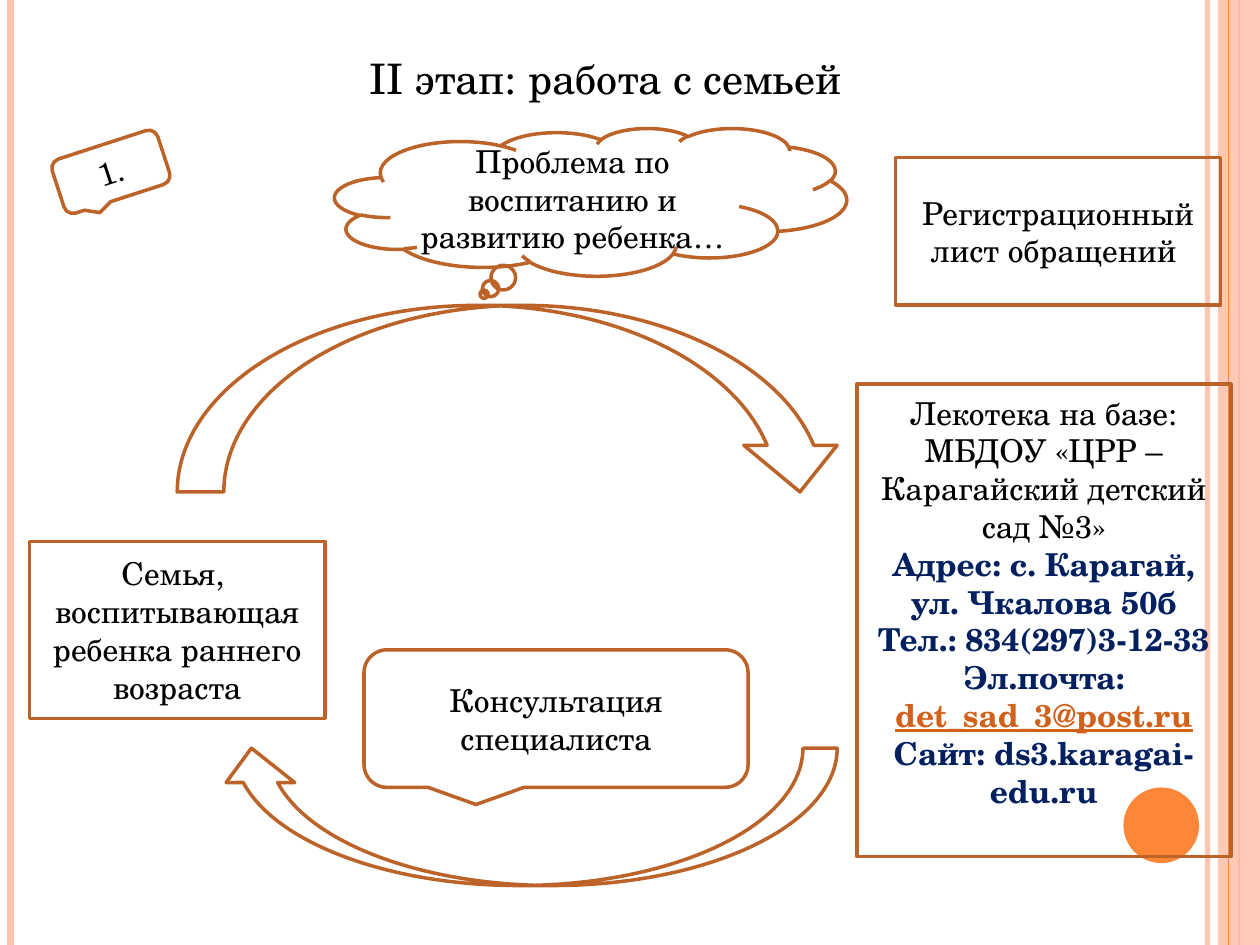
from lxml.etree import SubElement
from pptx import Presentation
from pptx.dml.color import RGBColor
from pptx.enum.shapes import MSO_CONNECTOR, MSO_SHAPE
from pptx.enum.text import MSO_ANCHOR, PP_ALIGN
from pptx.oxml.ns import qn
from pptx.util import Pt

FONT = "TeX Gyre Schola"
BLACK = RGBColor(0x00, 0x00, 0x00)
NAVY = RGBColor(0x00, 0x20, 0x60)
LINK = RGBColor(0xD2, 0x61, 0x1C)
BROWN = RGBColor(0xBC, 0x63, 0x29)
PINK = RGBColor(0xFE, 0xC3, 0xAE)
ORANGE = RGBColor(0xFE, 0x86, 0x37)

WIDTH, HEIGHT = 720, 540


def set_alpha(fill, percent):
    """Make a solid fill (or a line's fill) partly transparent."""
    color = fill._xPr.find(qn("a:solidFill"))[0]
    SubElement(color, qn("a:alpha"), val=str(percent * 1000))


def add_stripe(s, x, color, width, alpha=None):
    """Draw a vertical line over the full height of the slide."""
    line = s.shapes.add_connector(MSO_CONNECTOR.STRAIGHT, Pt(x), 0, Pt(x), Pt(HEIGHT))
    line.line.color.rgb = color
    line.line.width = Pt(width)
    if alpha:
        set_alpha(line.line.fill, alpha)
    SubElement(line._element.spPr, qn("a:effectLst"))


def add_solid(s, kind, box, color, alpha=None):
    sp = s.shapes.add_shape(kind, *map(Pt, box))
    sp.shadow.inherit = False
    sp.fill.solid()
    sp.fill.fore_color.rgb = color
    if alpha:
        set_alpha(sp.fill, alpha)
    sp.line.fill.background()


def add_outline(s, kind, box, rotation=0):
    sp = s.shapes.add_shape(kind, *map(Pt, box))
    sp.shadow.inherit = False
    sp.fill.background()
    sp.line.color.rgb = BROWN
    sp.line.width = Pt(2)
    sp.rotation = rotation
    return sp


def add_run(p, text, size=18, color=BLACK, bold=False, underline=False):
    r = p.add_run()
    r.text = text
    font = r.font
    font.name, font.size, font.bold, font.underline = FONT, Pt(size), bold, underline
    font.color.rgb = color


def write(sp, *paragraphs, **fmt):
    """Fill a shape with centred paragraphs, each a list of (text, own format) runs."""
    tf = sp.text_frame
    tf.word_wrap = True
    tf.vertical_anchor = MSO_ANCHOR.MIDDLE
    for i, runs in enumerate(paragraphs):
        p = tf.add_paragraph() if i else tf.paragraphs[0]
        p.alignment = PP_ALIGN.CENTER
        for text, own in runs:
            add_run(p, text, **{**fmt, **own})


def plain(text):
    return [(text, {})]


def add_background(s):
    add_stripe(s, 690, PINK, 3, alpha=93)
    add_stripe(s, 6, PINK, 4.5)
    add_stripe(s, 708, ORANGE, 1.5)
    add_solid(s, MSO_SHAPE.RECTANGLE, (696, 0, WIDTH - 696, HEIGHT), PINK, alpha=87)
    add_stripe(s, 702, ORANGE, 0.75)
    add_solid(s, MSO_SHAPE.OVAL, (642, 450, 43.2, 43.2), ORANGE)


def add_title(s):
    title = s.shapes.title
    title.left, title.top, title.width, title.height = map(Pt, (62, 16.5, 568, 56))
    write(title, plain("II этап: работа с семьей"), size=24)


def add_lekoteka(s):
    sp = add_outline(s, MSO_SHAPE.RECTANGLE, (489.6, 219.5, 213.8, 270))
    sp.text_frame.margin_bottom = Pt(25)
    contact = {"color": NAVY, "bold": True}
    mail = {"color": LINK, "bold": True, "underline": True}
    write(
        sp,
        plain("Лекотека на базе: МБДОУ «ЦРР – Карагайский детский сад №3»"),
        [("Адрес: с. Карагай, ул. Чкалова 50б", contact)],
        [("Тел.: 834(297)3-12-33", contact)],
        [("Эл.почта: ", contact), ("det_sad_3@post.ru", mail)],
        [("Сайт: ds3.karagai-edu.ru", contact)],
    )


def main():
    prs = Presentation()
    prs.slide_width, prs.slide_height = Pt(WIDTH), Pt(HEIGHT)
    s = prs.slides.add_slide(prs.slide_layouts[5])

    add_background(s)
    add_title(s)

    callout = MSO_SHAPE.ROUNDED_RECTANGULAR_CALLOUT
    number = add_outline(s, callout, (31.7, 82, 63.4, 32.4), rotation=342)
    write(number, plain("1."))

    family = add_outline(s, MSO_SHAPE.RECTANGLE, (16.8, 309.5, 169, 101))
    write(family, plain("Семья, "), plain("воспитывающая ребенка раннего возраста"))

    add_lekoteka(s)

    arrow = MSO_SHAPE.CURVED_DOWN_ARROW
    add_outline(s, arrow, (101.3, 174.5, 382.5, 106.6))
    add_outline(s, arrow, (124, 427.5, 354.4, 78.5), rotation=180)

    problem = add_outline(s, MSO_SHAPE.CLOUD_CALLOUT, (191.3, 73.2, 292.5, 84.4))
    write(problem, plain("Проблема по воспитанию и развитию ребенка…"))

    advice = add_outline(s, callout, (208, 371.3, 219.5, 78.6))
    write(advice, plain("Консультация специалиста"))

    register = add_outline(s, MSO_SHAPE.RECTANGLE, (511.8, 90, 185.7, 84.4))
    write(register, plain("Регистрационный лист обращений "))

    prs.save("out.pptx")


if __name__ == "__main__":
    main()
